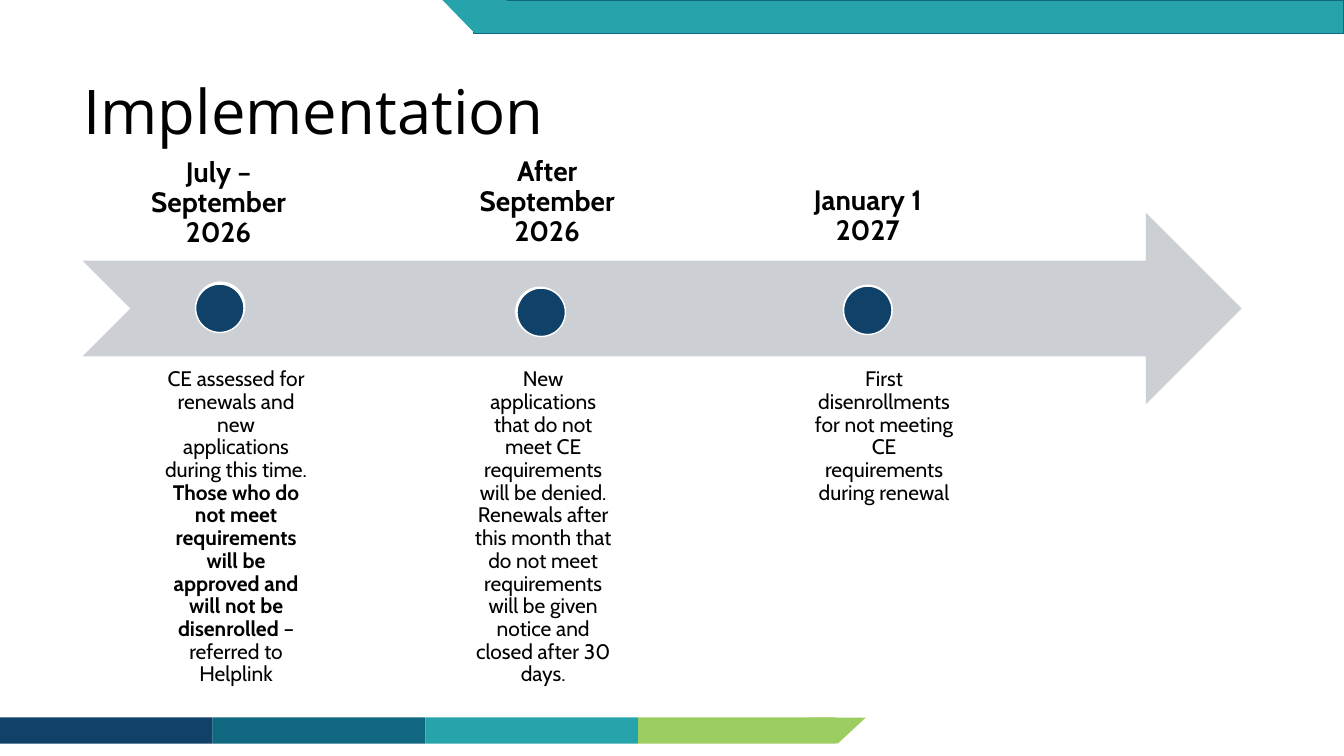
from pptx import Presentation
from pptx.dml.color import RGBColor
from pptx.enum import shapes, text
from pptx.util import Cm, Pt

COLORS = {
    "navy": "104169", "petrol": "0F687F", "teal": "26A3AB", "green": "9CCD60",
    "grey": "CCCFD4", "white": "FFFFFF", "black": "000000",
}
KIND = shapes.MSO_SHAPE
ANCHOR = text.MSO_ANCHOR
BAR_TOP, BAR_HEIGHT, BAR_WIDTH = 18.08, 0.66, 5.36
BANNER_HEIGHT = 0.84
DOT_SIZE = 1.22
LABEL_WIDTH, LABEL_HEIGHT = 4.22, 4.83
BODY_TOP = 8.99

# Per stage: heading and its place, halo and dot places, body left, (words, bold) pieces
STAGES = [
    ("July – September 2026", (3.4, 1.8), [(4.95, 7.11), (4.93, 7.16)], 3.84,
     [("CE assessed for renewals and new applications during this time. ", False),
      ("Those who do not meet requirements will be approved and will not be disenrolled ", True),
      ("– referred to Helplink", False)]),
    ("After September 2026", (11.68, 1.78), [(13, 7.24), (13.03, 7.26)], 11.58,
     [("New applications that do not meet CE requirements will be denied. Renewals after "
       "this month that do not meet requirements will be given notice and closed after "
       "30 days.", False)]),
    ("January 1 2027", (19.76, 1.75), [(21.26, 7.19), (21.26, 7.21)], 20.17,
     [("First disenrollments for not meeting CE requirements during renewal", False)]),
]


def rgb(name):
    return RGBColor.from_string(COLORS[name])


def add_block(page, kind, left, top, width, height, fill, line=None, rotation=0):
    block = page.shapes.add_shape(kind, Cm(left), Cm(top), Cm(width), Cm(height))
    block.shadow.inherit = False
    block.rotation = rotation
    block.fill.solid()
    block.fill.fore_color.rgb = rgb(fill)
    if line:
        block.line.color.rgb = rgb(line)
        block.line.width = Pt(1)
    else:
        block.line.fill.background()


def set_font(para, name, size):
    para.line_spacing = 0.9
    para.font.name = name
    para.font.size = Pt(size)
    para.font.color.rgb = rgb("black")


def add_label(page, left, top, pieces, size, inset, anchor):
    box = page.shapes.add_textbox(Cm(left), Cm(top), Cm(LABEL_WIDTH), Cm(LABEL_HEIGHT))
    frame = box.text_frame
    frame.word_wrap = True
    frame.vertical_anchor = anchor
    frame.margin_left = frame.margin_right = Cm(inset)
    frame.margin_top = frame.margin_bottom = Cm(inset)
    para = frame.paragraphs[0]
    para.alignment = text.PP_ALIGN.CENTER
    for words, bold in pieces:
        span = para.add_run()
        span.text = words
        span.font.bold = bold
    set_font(para, "Cabin", size)


def add_title(page, words):
    title = page.shapes.title
    title.left, title.top, title.width, title.height = Cm(1.85), Cm(1.04), Cm(29.21), Cm(3.68)
    title.text_frame.text = words
    title.text_frame.vertical_anchor = ANCHOR.MIDDLE
    para = title.text_frame.paragraphs[0]
    para.alignment = text.PP_ALIGN.LEFT
    set_font(para, "Open Sans", 44)


def add_bands(page):
    # Bottom strip, ending in a slanted tip
    for index, fill in enumerate(["navy", "petrol", "teal", "green"]):
        width = 5 if fill == "green" else BAR_WIDTH
        add_block(page, KIND.RECTANGLE, index * BAR_WIDTH, BAR_TOP, width, BAR_HEIGHT, fill)
    add_block(page, KIND.ISOSCELES_TRIANGLE, 20.4, BAR_TOP, 1.42, BAR_HEIGHT, "green",
              rotation=180)
    # Top banner, starting with a slanted tip
    add_block(page, KIND.RECTANGLE, 11.94, 0, 21.93, BANNER_HEIGHT, "teal", "petrol")
    add_block(page, KIND.ISOSCELES_TRIANGLE, 11.15, 0, 1.63, BANNER_HEIGHT, "teal",
              rotation=180)


def add_stage(page, heading, heading_place, dots, body_left, pieces):
    # The inset leaves room for "September" on one line
    add_label(page, *heading_place, [(heading, True)], 20, 0.36, ANCHOR.BOTTOM)
    for (left, top), fill in zip(dots, ["white", "navy"]):
        add_block(page, KIND.OVAL, left, top, DOT_SIZE, DOT_SIZE, fill, "white")
    add_label(page, body_left, BODY_TOP, pieces, 15, 0.3, ANCHOR.TOP)


def main():
    deck = Presentation()
    deck.slide_width, deck.slide_height = Cm(33.87), Cm(19.05)
    page = deck.slides.add_slide(deck.slide_layouts[5])

    add_bands(page)
    # Timeline
    add_block(page, KIND.NOTCHED_RIGHT_ARROW, 2.08, 5.36, 29.21, 4.83, "grey")
    for stage in STAGES:
        add_stage(page, *stage)
    add_title(page, "Implementation")

    deck.save("out.pptx")


if __name__ == "__main__":
    main()
